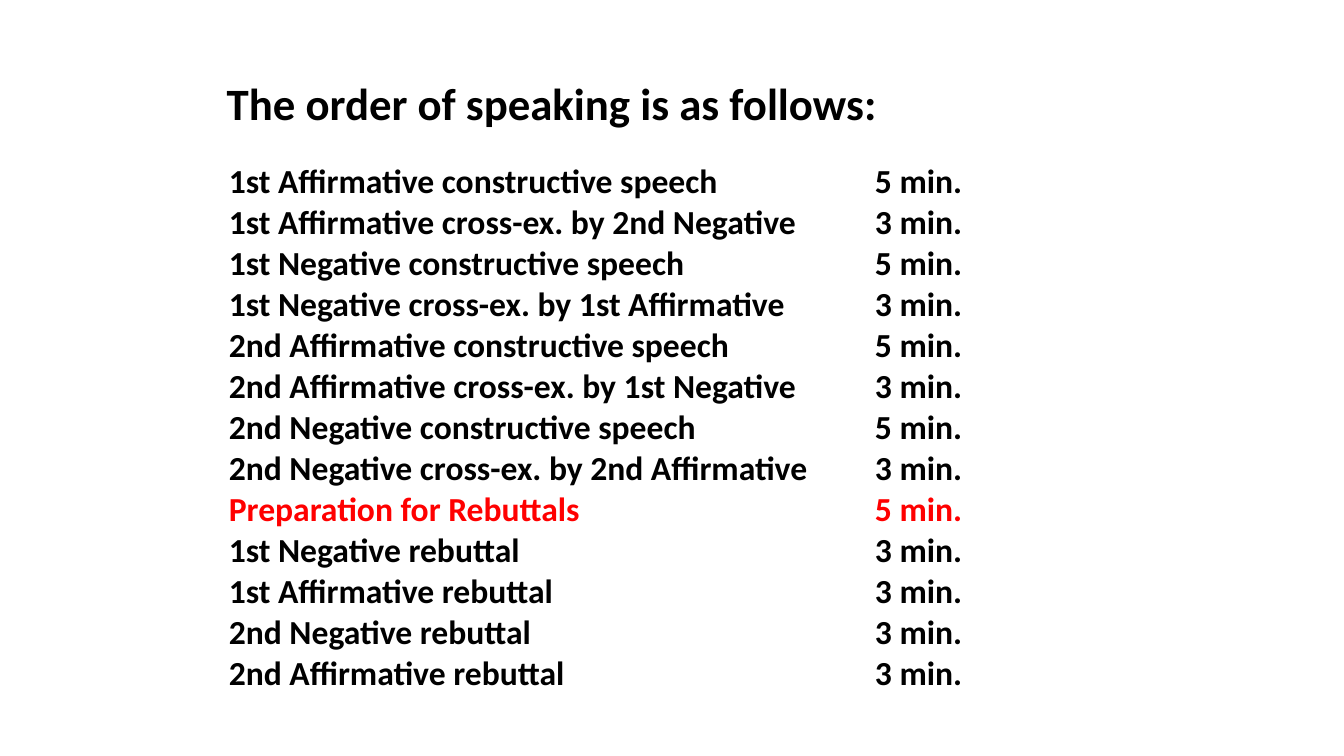
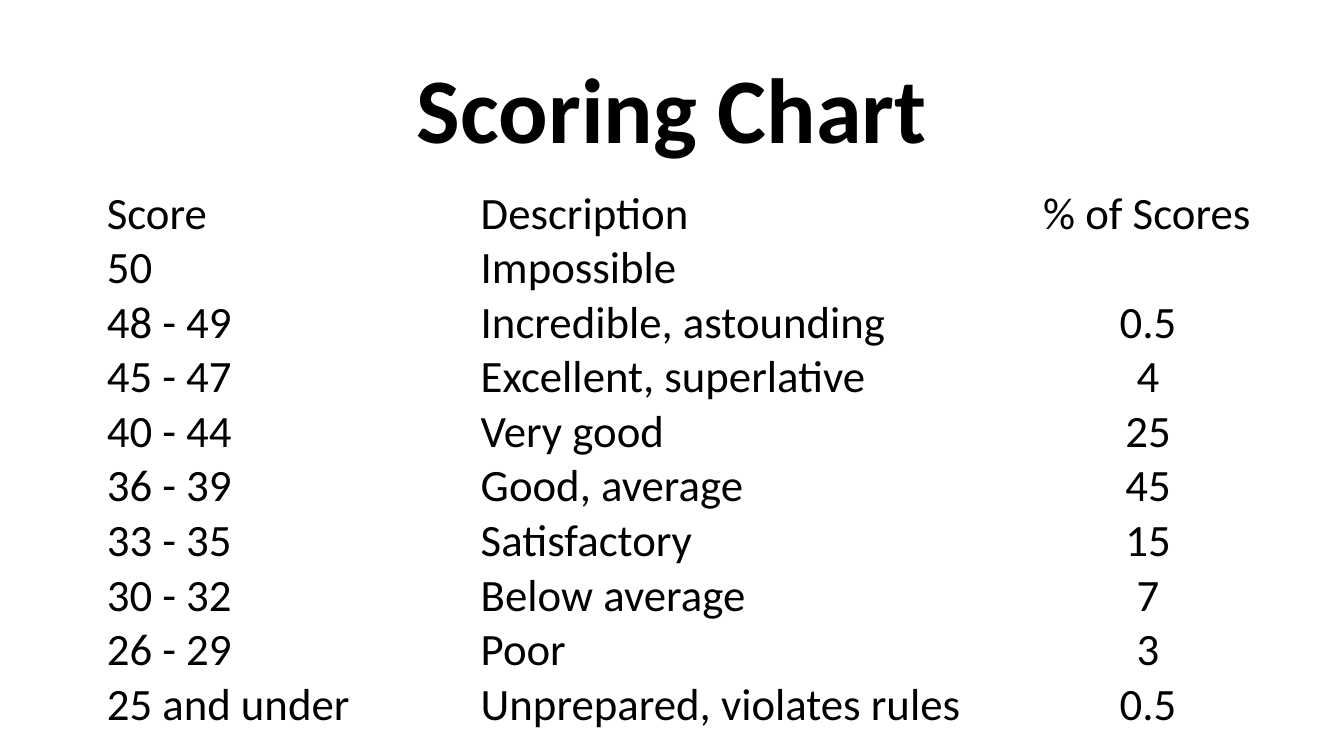
import pptx
import pptx.util
import pptx.dml.color
import pptx.enum.text

Pt = pptx.util.Pt
ALIGN = pptx.enum.text.PP_ALIGN
ANCHOR = pptx.enum.text.MSO_ANCHOR

# Content
SPEECHES_TITLE = "The order of speaking is as follows:"
SPEECHES = [
    ("1st Affirmative constructive speech", "5 min."),
    ("1st Affirmative cross-ex. by 2nd Negative", "3 min."),
    ("1st Negative constructive speech", "5 min."),
    ("1st Negative cross-ex. by 1st Affirmative", "3 min."),
    ("2nd Affirmative constructive speech", "5 min."),
    ("2nd Affirmative cross-ex. by 1st Negative", "3 min."),
    ("2nd Negative constructive speech", "5 min."),
    ("2nd Negative cross-ex. by 2nd Affirmative", "3 min."),
    ("Preparation for Rebuttals", "5 min."),
    ("1st Negative rebuttal", "3 min."),
    ("1st Affirmative rebuttal", "3 min."),
    ("2nd Negative rebuttal", "3 min."),
    ("2nd Affirmative rebuttal", "3 min."),
]
PREPARATION_ROW = 8

SCORES_TITLE = "Scoring Chart"
SCORES = [
    ("Score", "Description", "% of Scores"),
    ("50", "Impossible", ""),
    ("48 - 49", "Incredible, astounding", "0.5"),
    ("45 - 47", "Excellent, superlative", "4"),
    ("40 - 44", "Very good", "25"),
    ("36 - 39", "Good, average", "45"),
    ("33 - 35", "Satisfactory", "15"),
    ("30 - 32", "Below average", "7"),
    ("26 - 29", "Poor", "3"),
    ("25 and under", "Unprepared, violates rules", "0.5"),
]

# Shared style
COLORS = {"text": "000000", "accent": "FF0000", "paper": "FFFFFF"}
FONT = "Calibri"
LINE_HEIGHT = 1.22  # row height per point of text size


def rgb(name):
    return pptx.dml.color.RGBColor.from_string(COLORS[name])


def set_all(obj, values):
    for name, value in values.items():
        setattr(obj, name, value)


def write(p, text, size, bold, color="text", align=ALIGN.LEFT):
    p.alignment = align
    r = p.add_run()
    r.text = text
    set_all(r.font, {"name": FONT, "size": Pt(size), "bold": bold})
    r.font.color.rgb = rgb(color)


def add_title(s, text, box, size, align=ALIGN.LEFT, anchor=ANCHOR.TOP, spacing=1.0):
    tf = s.shapes.add_textbox(*map(Pt, box)).text_frame
    set_all(tf, {"word_wrap": True, "vertical_anchor": anchor})
    p = tf.paragraphs[0]
    p.line_spacing = spacing
    write(p, text, size, True, align=align)


def add_table(s, rows, left, top, widths, size, margin, anchor, style):
    """Add a plain white table; style(row, column) gives the text options."""
    height = round(size * LINE_HEIGHT, 1)
    box = (left, top, sum(widths), height * len(rows))
    table = s.shapes.add_table(len(rows), len(widths), *map(Pt, box)).table
    set_all(table, {"first_row": False, "horz_banding": False})
    for column, width in zip(table.columns, widths):
        column.width = Pt(width)
    for i, values in enumerate(rows):
        table.rows[i].height = Pt(height)
        for j, value in enumerate(values):
            cell = table.cell(i, j)
            set_all(cell, {"margin_left": Pt(margin), "margin_right": Pt(margin),
                           "margin_top": 0, "margin_bottom": 0,
                           "vertical_anchor": anchor})
            cell.fill.solid()
            cell.fill.fore_color.rgb = rgb("paper")
            if value:
                write(cell.text_frame.paragraphs[0], value, size, **style(i, j))


def speech_style(i, j):
    return {"bold": True, "color": "accent" if i == PREPARATION_ROW else "text"}


def score_style(i, j):
    centred = i > 0 and j == 2
    return {"bold": False, "align": ALIGN.CENTER if centred else ALIGN.LEFT}


def main():
    prs = pptx.Presentation()
    set_all(prs, {"slide_width": Pt(960), "slide_height": Pt(540)})
    blank = prs.slide_layouts[6]

    # Order of speaking
    s = prs.slides.add_slide(blank)
    add_table(s, SPEECHES, 157.7, 115.2, (461.5, 85.7), 24, 5.8,
              ANCHOR.TOP, speech_style)
    add_title(s, SPEECHES_TITLE, (154.8, 50.4, 495.4, 46), 32)

    # Scoring chart
    s = prs.slides.add_slide(blank)
    add_title(s, SCORES_TITLE, (0, 28.8, 960, 104.4), 66,
              ALIGN.CENTER, ANCHOR.MIDDLE, 0.9)
    add_table(s, SCORES, 76.3, 133.2, (267.1, 401.8, 149.8), 32, 0,
              ANCHOR.BOTTOM, score_style)

    prs.save("out.pptx")


if __name__ == "__main__":
    main()
